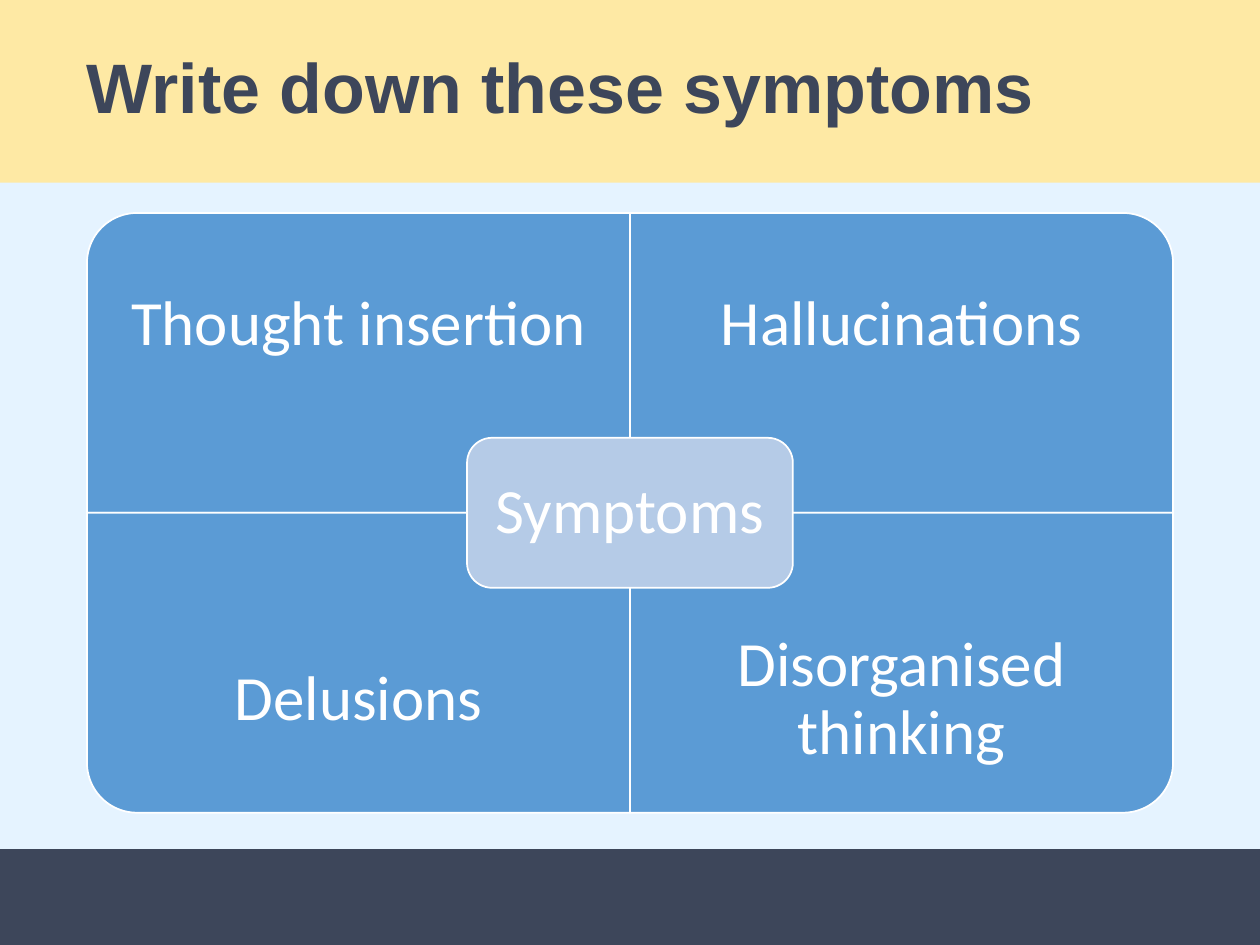
from dataclasses import dataclass

from pptx import Presentation
from pptx.dml.color import RGBColor
from pptx.enum.shapes import MSO_SHAPE
from pptx.enum.text import MSO_ANCHOR, MSO_AUTO_SIZE, PP_ALIGN
from pptx.util import Inches, Pt

RECT = MSO_SHAPE.RECTANGLE
ROUNDED = MSO_SHAPE.ROUNDED_RECTANGLE
ONE_ROUNDED = MSO_SHAPE.ROUND_1_RECTANGLE
MIDDLE = MSO_ANCHOR.MIDDLE
NO_AUTOFIT = MSO_AUTO_SIZE.NONE
LEFT, CENTER = PP_ALIGN.LEFT, PP_ALIGN.CENTER
TITLE_ONLY = 5


@dataclass(frozen=True)
class Theme:
    background: str = "E5F3FF"
    banner: str = "FEE9A4"
    dark: str = "3D465A"
    quadrant: str = "5B9BD5"
    hub: str = "B5CBE7"
    white: str = "FFFFFF"
    title_font: str = "Arial"
    body_font: str = "Calibri"
    title_size: int = 40
    body_size: int = 36
    outline: int = 1


@dataclass(frozen=True)
class Box:
    left: float
    top: float
    width: float
    height: float

    def lengths(self) -> list:
        return [Inches(v) for v in (self.left, self.top, self.width, self.height)]

    def turned(self) -> "Box":
        """Swap width and height around the same centre."""
        shift = (self.width - self.height) / 2
        return Box(self.left + shift, self.top - shift, self.height, self.width)


@dataclass(frozen=True)
class Quadrant:
    text: str
    column: int
    row: int
    rotation: int  # turns the rounded corner outwards


THEME = Theme()
MATRIX = Box(0.69, 1.69, 8.62, 4.76)
LABEL_SHARE = 0.75  # part of a quadrant's height that holds its label
QUADRANTS = [
    Quadrant("Thought insertion", 0, 0, 270),
    Quadrant("Hallucinations", 1, 0, 0),
    Quadrant("Delusions", 0, 1, 180),
    Quadrant("Disorganised thinking", 1, 1, 90),
]


def rgb(value: str) -> RGBColor:
    return RGBColor.from_string(value)


def write(frame, text: str, *, font=THEME.body_font, size=THEME.body_size,
          color=THEME.white, bold=False, align=CENTER, inset=0.28,
          left_inset=None) -> None:
    frame.word_wrap = True
    frame.auto_size = NO_AUTOFIT
    frame.vertical_anchor = MIDDLE
    frame.margin_left = Inches(inset if left_inset is None else left_inset)
    frame.margin_right = frame.margin_top = frame.margin_bottom = Inches(inset)
    paragraph = frame.paragraphs[0]
    paragraph.text = text
    paragraph.alignment = align
    paragraph.line_spacing = 0.9
    paragraph.font.name = font
    paragraph.font.size = Pt(size)
    paragraph.font.bold = bold
    paragraph.font.color.rgb = rgb(color)


def add_panel(slide, kind, box: Box, fill: str, *, outlined=True, rotation=0):
    panel = slide.shapes.add_shape(kind, *box.lengths())
    panel.shadow.inherit = False
    panel.rotation = rotation
    panel.fill.solid()
    panel.fill.fore_color.rgb = rgb(fill)
    if outlined:
        panel.line.color.rgb = rgb(THEME.white)
        panel.line.width = Pt(THEME.outline)
    else:
        panel.line.fill.background()
    return panel


def add_quadrant(slide, quadrant: Quadrant) -> None:
    width, height = MATRIX.width / 2, MATRIX.height / 2
    cell = Box(MATRIX.left + quadrant.column * width,
               MATRIX.top + quadrant.row * height, width, height)
    sideways = quadrant.rotation % 180 == 90
    add_panel(slide, ONE_ROUNDED, cell.turned() if sideways else cell,
              THEME.quadrant, rotation=quadrant.rotation)
    # Labels keep to the outer part, clear of the central box
    label_top = cell.top + quadrant.row * height * (1 - LABEL_SHARE)
    label = Box(cell.left, label_top, width, height * LABEL_SHARE)
    write(slide.shapes.add_textbox(*label.lengths()).text_frame, quadrant.text)


def add_title(slide, text: str) -> None:
    title = slide.shapes.title
    title.left, title.top, title.width, title.height = Box(0, 0, 10, 1.45).lengths()
    title.fill.solid()
    title.fill.fore_color.rgb = rgb(THEME.banner)
    write(title.text_frame, text, font=THEME.title_font, size=THEME.title_size,
          color=THEME.dark, bold=True, align=LEFT, inset=0.05, left_inset=0.69)


def main() -> None:
    deck = Presentation()
    deck.slide_width, deck.slide_height = Inches(10), Inches(7.5)
    slide = deck.slides.add_slide(deck.slide_layouts[TITLE_ONLY])
    slide.background.fill.solid()
    slide.background.fill.fore_color.rgb = rgb(THEME.background)

    # Title banner and footer band
    add_title(slide, "Write down these symptoms")
    add_panel(slide, RECT, Box(0, 6.74, 10, 0.76), THEME.dark, outlined=False)

    # Four quadrants around the central topic
    for quadrant in QUADRANTS:
        add_quadrant(slide, quadrant)
    hub_width, hub_height = MATRIX.width * 0.3, MATRIX.height / 4
    hub_box = Box(MATRIX.left + (MATRIX.width - hub_width) / 2,
                  MATRIX.top + (MATRIX.height - hub_height) / 2,
                  hub_width, hub_height)
    hub = add_panel(slide, ROUNDED, hub_box, THEME.hub)
    write(hub.text_frame, "Symptoms", inset=0.15)

    deck.save("out.pptx")


if __name__ == "__main__":
    main()
